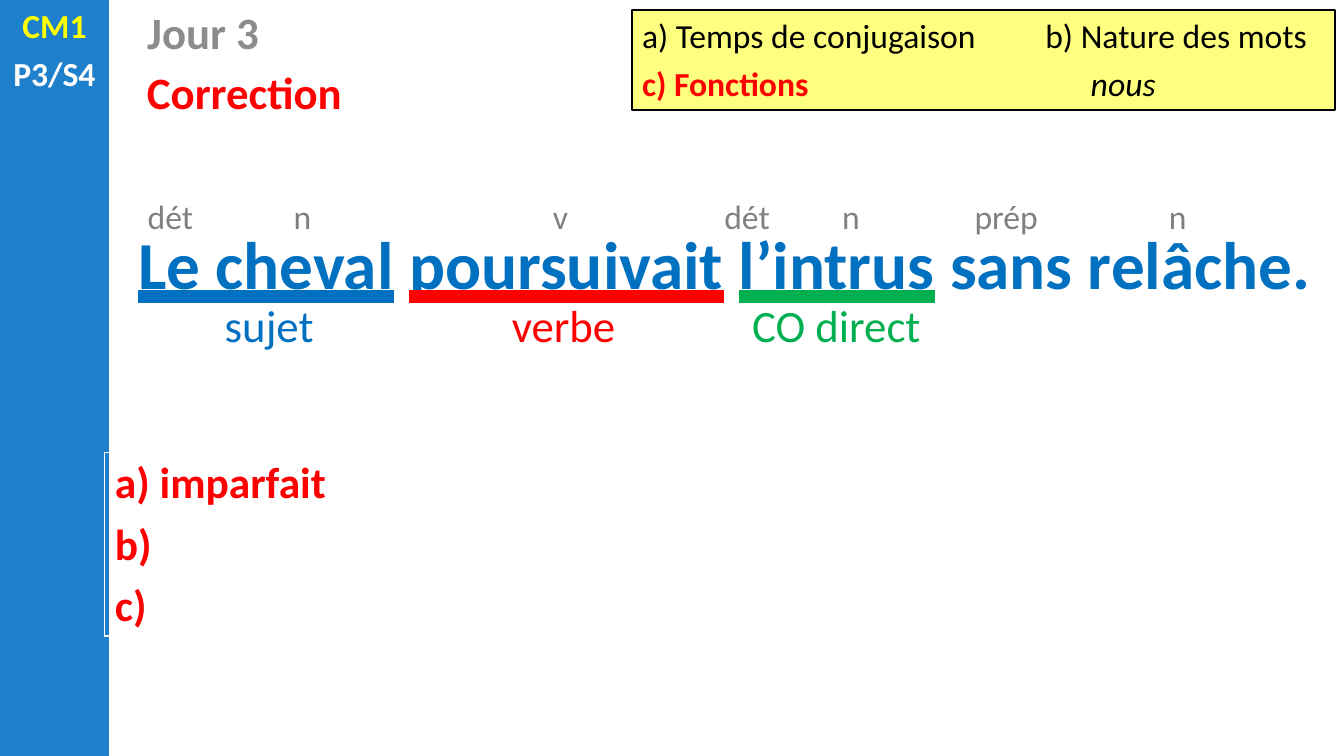
from dataclasses import dataclass, field

from lxml import etree
from pptx import Presentation
from pptx.dml.color import RGBColor
from pptx.enum.shapes import MSO_SHAPE
from pptx.enum.text import MSO_ANCHOR, MSO_AUTO_SIZE, MSO_UNDERLINE, PP_ALIGN
from pptx.oxml.ns import qn
from pptx.util import Inches, Pt

RECTANGLE = MSO_SHAPE.RECTANGLE
LEFT, CENTER = PP_ALIGN.LEFT, PP_ALIGN.CENTER
HEAVY = MSO_UNDERLINE.HEAVY_LINE

BLACK = RGBColor(0x00, 0x00, 0x00)
WHITE = RGBColor(0xFF, 0xFF, 0xFF)
YELLOW = RGBColor(0xFF, 0xFF, 0x00)
RED = RGBColor(0xFF, 0x00, 0x00)
GREEN = RGBColor(0x00, 0xB0, 0x50)
BLUE = RGBColor(0x00, 0x70, 0xC0)
BAND_BLUE = RGBColor(0x1E, 0x7F, 0xCB)
DAY_GRAY = RGBColor(0x8C, 0x8C, 0x8C)
NATURE_GRAY = RGBColor(0x80, 0x80, 0x80)

FONT = "Calibri"
BAND_WIDTH = 1.08
CONTENT_LEFT, CONTENT_WIDTH = 1.04, 12.29


@dataclass
class Run:
    text: str
    color: RGBColor
    size: float
    formats: dict = field(default_factory=dict)
    underline_color: RGBColor | None = None


@dataclass
class Line:
    runs: list[Run]
    tab: float | None = None


@dataclass
class Label:
    text: str
    left: float
    width: float
    color: RGBColor


BOLD = {"bold": True}


def add_run(paragraph, item: Run) -> None:
    run = paragraph.add_run()
    run.text = item.text
    formats = {"name": FONT, "size": Pt(item.size), "bold": False, **item.formats}
    for name, value in formats.items():
        setattr(run.font, name, value)
    run.font.color.rgb = item.color
    if item.underline_color is not None:
        run.font.underline = HEAVY
        underline_fill = etree.Element(qn("a:uFill"))
        solid = etree.SubElement(underline_fill, qn("a:solidFill"))
        etree.SubElement(solid, qn("a:srgbClr"), val=str(item.underline_color))
        run.font._element.find(qn("a:solidFill")).addnext(underline_fill)


def write_lines(frame, lines: list[Line], align=LEFT, before: float = 5.5, after: float = 0) -> None:
    frame.word_wrap = True
    for index, line in enumerate(lines):
        paragraph = frame.paragraphs[0] if index == 0 else frame.add_paragraph()
        formats = {"alignment": align, "space_before": Pt(before if index else 0),
                   "space_after": Pt(after)}
        for name, value in formats.items():
            setattr(paragraph, name, value)
        if line.tab is not None:
            tabs = etree.SubElement(paragraph._p.get_or_add_pPr(), qn("a:tabLst"))
            etree.SubElement(tabs, qn("a:tab"), pos=str(Inches(line.tab)), algn="l")
        for item in line.runs:
            add_run(paragraph, item)


def add_text(slide, left: float, top: float, width: float, height: float,
             lines: list[Line], align=LEFT) -> None:
    box = slide.shapes.add_textbox(Inches(left), Inches(top), Inches(width), Inches(height))
    write_lines(box.text_frame, lines, align)


def add_rectangle(slide, left: float, top: float, width: float, height: float, color: RGBColor):
    shape = slide.shapes.add_shape(RECTANGLE, Inches(left), Inches(top),
                                   Inches(width), Inches(height))
    shape.shadow.inherit = False
    shape.fill.solid()
    shape.fill.fore_color.rgb = color
    shape.line.fill.background()
    return shape


def add_labels(slide, labels: list[Label], top: float, height: float, size: float) -> None:
    for label in labels:
        add_text(slide, label.left, top, label.width, height,
                 [Line([Run(label.text, label.color, size)])], CENTER)


def add_title(slide) -> None:
    title = slide.shapes.title
    position = {"left": 1.36, "top": 0, "width": 7.91, "height": 0.64}
    for name, value in position.items():
        setattr(title, name, Inches(value))
    title.text_frame.auto_size = MSO_AUTO_SIZE.NONE
    title.text_frame.vertical_anchor = MSO_ANCHOR.TOP
    write_lines(title.text_frame, [Line([Run("Jour 3", DAY_GRAY, 32, BOLD)])])


def add_instructions(slide) -> None:
    box = add_rectangle(slide, 6.27, 0.1, 6.97, 0.99, YELLOW)
    color = box._element.spPr.find(qn("a:solidFill")).find(qn("a:srgbClr"))
    etree.SubElement(color, qn("a:alpha"), val="50000")
    box.line.color.rgb = BLACK
    box.line.width = Pt(1.5)
    box.text_frame.vertical_anchor = MSO_ANCHOR.TOP
    write_lines(box.text_frame, [
        Line([Run("a) Temps de conjugaison\tb) Nature des mots", BLACK, 24)], tab=4),
        Line([Run("c) Fonctions\t", RED, 24, BOLD),
              Run("nous", BLACK, 24, {"italic": True})], tab=4.45),
    ])


def add_answers(slide) -> None:
    table = slide.shapes.add_table(1, 1, Inches(CONTENT_LEFT), Inches(4.49),
                                   Inches(CONTENT_WIDTH), Inches(1.82)).table
    table.first_row = False
    table.horz_banding = False
    cell = table.cell(0, 0)
    cell.fill.background()
    answers = ["a) imparfait", "b)", "c)"]
    write_lines(cell.text_frame, [Line([Run(text, RED, 31, BOLD)]) for text in answers],
                before=0, after=6)


def main() -> None:
    presentation = Presentation()
    presentation.slide_width = Inches(13.33)
    presentation.slide_height = Inches(7.5)
    slide = presentation.slides.add_slide(presentation.slide_layouts[5])

    # Side band with class and period
    add_rectangle(slide, 0, 0, BAND_WIDTH, 7.5, BAND_BLUE)
    add_text(slide, 0, 0, BAND_WIDTH, 0.99,
             [Line([Run("CM1", YELLOW, 24, BOLD)]), Line([Run("P3/S4", WHITE, 24, BOLD)])],
             CENTER)

    # Heading and instructions
    add_title(slide)
    add_text(slide, 1.36, 0.59, 4.83, 0.64, [Line([Run("Correction", RED, 32, BOLD)])])
    add_instructions(slide)

    # Sentence with its underlined groups
    sentence = [("Le cheval", BLUE), (" ", None), ("poursuivait", RED), (" ", None),
                ("l’intrus", GREEN), (" sans relâche.", None)]
    add_text(slide, CONTENT_LEFT, 2.16, CONTENT_WIDTH, 0.91,
             [Line([Run(text, BLUE, 48, BOLD, underline) for text, underline in sentence])],
             CENTER)

    # Word natures above, functions below
    natures = [("dét", 1.24), ("n", 2.55), ("v", 5.11), ("dét", 6.96),
               ("n", 7.99), ("prép", 9.53), ("n", 11.23)]
    add_labels(slide, [Label(text, left, 0.9, NATURE_GRAY) for text, left in natures],
               1.89, 0.5, 24)
    functions = [Label("sujet", 2.05, 1.24, BLUE), Label("verbe", 4.97, 1.24, RED),
                 Label("CO direct", 7.12, 2.35, GREEN)]
    add_labels(slide, functions, 2.9, 0.64, 32)

    # Answers
    add_answers(slide)

    presentation.save("out.pptx")


if __name__ == "__main__":
    main()
